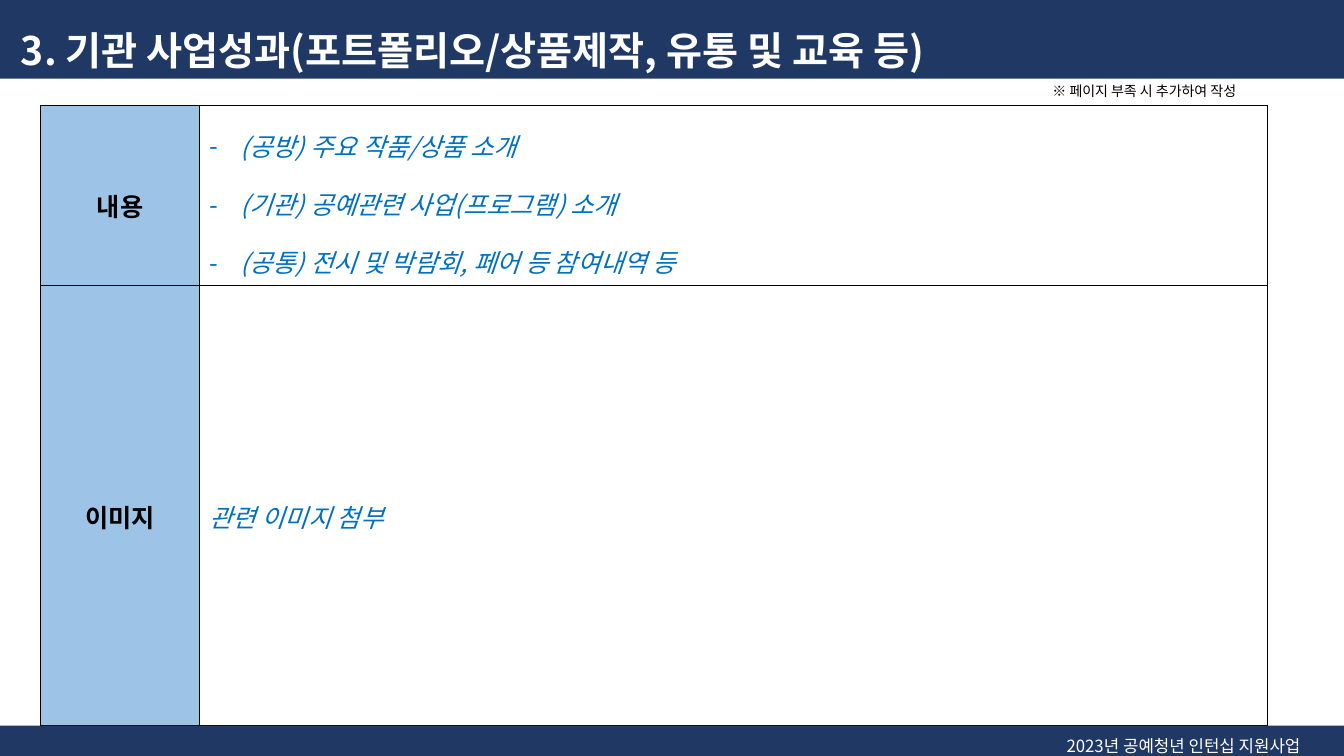
from dataclasses import dataclass
from typing import Any

from lxml import etree
from pptx import Presentation
from pptx.dml.color import RGBColor
from pptx.enum.text import MSO_ANCHOR, MSO_AUTO_SIZE, PP_ALIGN
from pptx.oxml.ns import qn
from pptx.util import Emu, Pt

CENTER, LEFT = PP_ALIGN.CENTER, PP_ALIGN.LEFT
MIDDLE = MSO_ANCHOR.MIDDLE
GROW = MSO_AUTO_SIZE.SHAPE_TO_FIT_TEXT
EMU_PER_PX = 9144
SLIDE_WIDTH, SLIDE_HEIGHT = 1333, 750
BULLET_INDENT = 31


@dataclass(frozen=True)
class Theme:
    """Colours, font and type sizes of the deck."""
    font: str = "Noto Sans CJK KR"
    navy: str = "203864"
    sky: str = "9DC3E6"
    blue: str = "0070C0"
    black: str = "000000"
    white: str = "FFFFFF"
    title: int = 28
    body: int = 18
    footer: int = 12
    note: int = 10
    border: float = 0.28


THEME = Theme()


@dataclass(frozen=True)
class Box:
    """A rectangle in px."""
    left: int
    top: int
    width: int
    height: int

    def emu(self) -> tuple[Emu, ...]:
        """Return the four lengths in EMU."""
        return tuple(map(px, (self.left, self.top, self.width, self.height)))


@dataclass(frozen=True)
class Style:
    """The look of a paragraph."""
    size: int
    color: str
    bold: bool = False
    italic: bool = False
    align: Any = LEFT
    spacing: float = 1.0
    bullet: str = ""


@dataclass(frozen=True)
class Label:
    """A free text line."""
    box: Box
    text: str
    style: Style


@dataclass(frozen=True)
class Row:
    """A table row with a heading and its guidance."""
    height: int
    heading: str
    lines: tuple[str, ...]
    style: Style
    margins: tuple[int, int] = (5, 5)


HEADING = Style(THEME.body, THEME.black, bold=True, align=CENTER, spacing=1.6)
GUIDE = Style(THEME.body, THEME.blue, italic=True, spacing=1.6)
GUIDE_LIST = Style(THEME.body, THEME.blue, italic=True, spacing=1.6, bullet="-")

HEADER_BAR = Box(0, 0, SLIDE_WIDTH, 78)
FOOTER_BAR = Box(0, 720, SLIDE_WIDTH, 30)
TITLE = Label(Box(11, -2, 1012, 70), "3. 기관 사업성과(포트폴리오/상품제작, 유통 및 교육 등)",
              Style(THEME.title, THEME.white, bold=True, spacing=1.5))
NOTE = Label(Box(1034, 77, 224, 27), "※ 페이지 부족 시 추가하여 작성",
             Style(THEME.note, THEME.black))
FOOTER = Label(Box(1048, 715, 281, 36), "2023년 공예청년 인턴십 지원사업",
               Style(THEME.footer, THEME.white, spacing=1.5))

TABLE_BOX = Box(40, 104, 1217, 591)
COLUMN_WIDTHS = (158, 1059)
ROWS = (
    Row(154, "내용", ("(공방) 주요 작품/상품 소개",
                    "(기관) 공예관련 사업(프로그램) 소개",
                    "(공통) 전시 및 박람회, 페어 등 참여내역 등"), GUIDE_LIST, (0, 5)),
    Row(437, "이미지", ("관련 이미지 첨부",), GUIDE),
)


def px(length: int) -> Emu:
    """Turn px into EMU."""
    return Emu(length * EMU_PER_PX)


def apply(target: Any, values: dict[str, Any]) -> None:
    """Set each named attribute on the target."""
    for name, value in values.items():
        setattr(target, name, value)


def write(frame: Any, lines: tuple[str, ...], style: Style) -> None:
    """Fill a text frame with one paragraph per line."""
    for index, line in enumerate(lines):
        para = frame.add_paragraph() if index else frame.paragraphs[0]
        apply(para, {"alignment": style.align, "line_spacing": style.spacing})
        if style.bullet:
            properties = para._p.get_or_add_pPr()
            properties.set("marL", str(px(BULLET_INDENT)))
            properties.set("indent", str(-px(BULLET_INDENT)))
            etree.SubElement(properties, qn("a:buFont"), typeface=THEME.font)
            etree.SubElement(properties, qn("a:buChar"), char=style.bullet)
        span = para.add_run()
        span.text = line
        apply(span.font, {"name": THEME.font, "size": Pt(style.size),
                          "bold": style.bold, "italic": style.italic})
        span.font.color.rgb = RGBColor.from_string(style.color)
        east_asian = etree.Element(qn("a:ea"), typeface=THEME.font)
        span.font._element.find(qn("a:latin")).addnext(east_asian)


def add_bar(shapes: Any, box: Box, rectangle: int = 1) -> None:
    """Draw a navy band."""
    bar = shapes.add_shape(rectangle, *box.emu())
    bar.shadow.inherit = False
    bar.fill.solid()
    bar.fill.fore_color.rgb = RGBColor.from_string(THEME.navy)
    bar.line.fill.background()


def add_label(shapes: Any, label: Label) -> None:
    """Draw a free text line."""
    frame = shapes.add_textbox(*label.box.emu()).text_frame
    apply(frame, {"word_wrap": False, "auto_size": GROW})
    write(frame, (label.text,), label.style)


def add_borders(cell: Any) -> None:
    """Outline all four sides of a cell."""
    properties = cell._tc.get_or_add_tcPr()
    for index, side in enumerate(("a:lnL", "a:lnR", "a:lnT", "a:lnB")):
        line = etree.Element(qn(side), w=str(Pt(THEME.border)))
        fill = etree.SubElement(line, qn("a:solidFill"))
        etree.SubElement(fill, qn("a:srgbClr"), val=THEME.black)
        properties.insert(index, line)


def add_form(shapes: Any) -> None:
    """Draw the two-column form."""
    table = shapes.add_table(len(ROWS), len(COLUMN_WIDTHS), *TABLE_BOX.emu()).table
    apply(table, {"first_row": False, "horz_banding": False})
    for column, width in zip(table.columns, COLUMN_WIDTHS):
        column.width = px(width)
    for table_row, row in zip(table.rows, ROWS):
        table_row.height = px(row.height)
        heading, guide = table_row.cells
        heading.fill.solid()
        heading.fill.fore_color.rgb = RGBColor.from_string(THEME.sky)
        guide.fill.background()
        top, bottom = row.margins
        apply(guide, {"margin_top": px(top), "margin_bottom": px(bottom)})
        write(heading.text_frame, (row.heading,), HEADING)
        write(guide.text_frame, row.lines, row.style)
        for cell in (heading, guide):
            cell.vertical_anchor = MIDDLE
            add_borders(cell)


def main() -> None:
    """Build and save the deck."""
    deck = Presentation()
    apply(deck, {"slide_width": px(SLIDE_WIDTH), "slide_height": px(SLIDE_HEIGHT)})
    page = deck.slides.add_slide(deck.slide_layouts[6])
    add_bar(page.shapes, HEADER_BAR)
    add_form(page.shapes)
    add_label(page.shapes, NOTE)
    add_label(page.shapes, TITLE)
    footer = page.shapes.add_group_shape()
    add_bar(footer.shapes, FOOTER_BAR)
    add_label(footer.shapes, FOOTER)
    deck.save("out.pptx")


if __name__ == "__main__":
    main()
